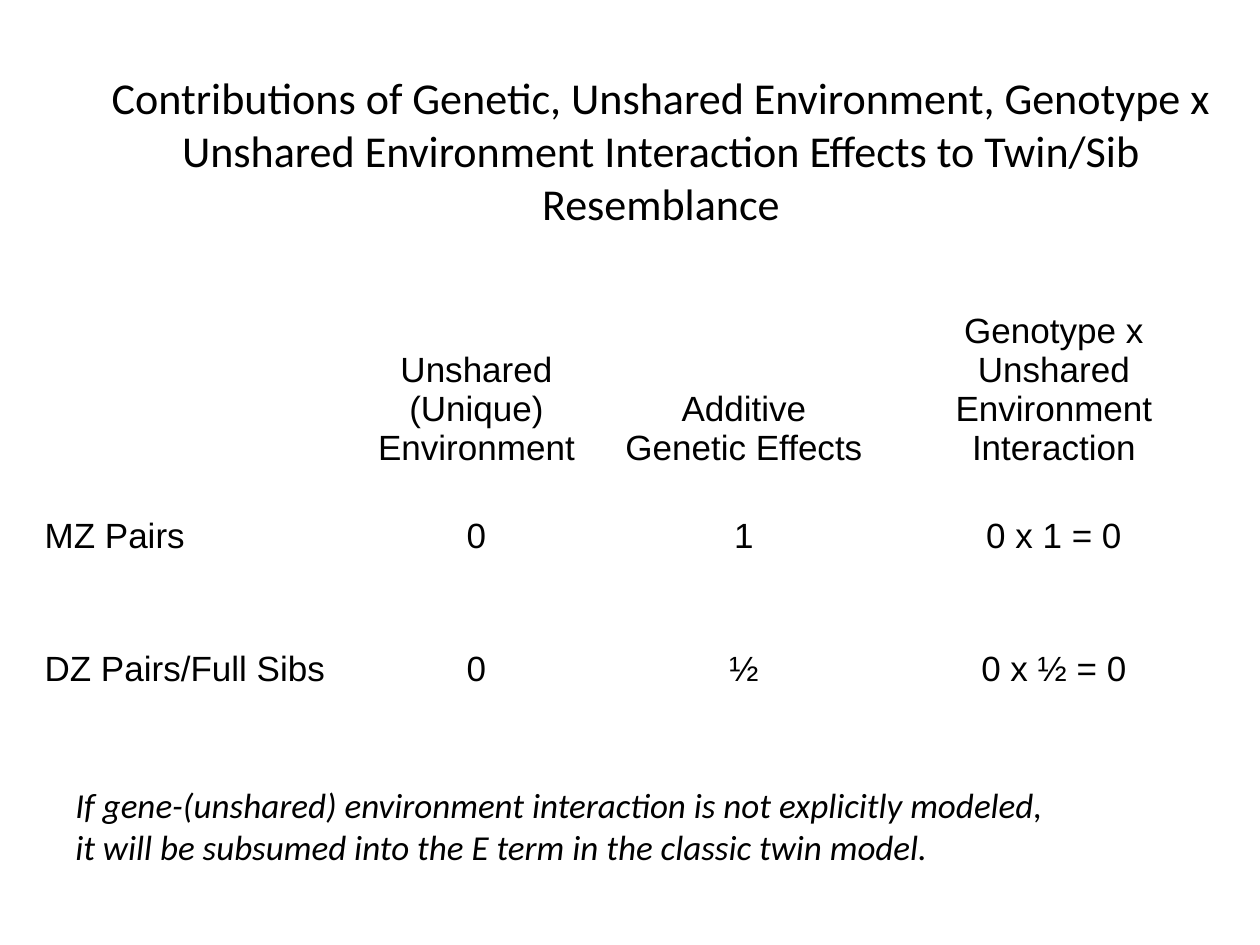
"""Build a slide on gene-environment contributions to twin and sibling resemblance."""
from pptx import Presentation
from pptx.dml.color import RGBColor
from pptx.enum.text import MSO_ANCHOR, MSO_AUTO_SIZE, PP_ALIGN
from pptx.util import Emu, Pt

BLACK = RGBColor(0, 0, 0)
COLUMN_WIDTHS = (312, 265, 270, 350)
ROW_HEIGHTS = (161, 125, 141)
TITLE = (
    "Contributions of Genetic, Unshared Environment, Genotype x "
    "Unshared Environment Interaction Effects to Twin/Sib Resemblance"
)
RESEMBLANCE = (
    ("", "Unshared (Unique) Environment", "Additive Genetic Effects",
     "Genotype x Unshared Environment Interaction"),
    ("MZ Pairs", "0", "1", "0 x 1 = 0"),
    ("DZ Pairs/Full Sibs", "0", "½", "0 x ½ = 0"),
)
NOTE = (
    "If gene-(unshared) environment interaction is not explicitly modeled,\n"
    "it will be subsumed into the E term in the classic twin model."
)


def px(length):
    """Turn pixels into EMU at 126 pixels to the inch."""
    return Emu(round(length * 914400 / 126))


def write(frame, text, font, size, align=PP_ALIGN.LEFT, italic=False, before=0):
    """Fill a text frame and format its paragraphs and runs."""
    frame.text = text
    for para in frame.paragraphs:
        para.alignment = align
        para.space_before = Pt(before)
        for span in para.runs:
            span.font.name = font
            span.font.size = Pt(size)
            span.font.italic = italic
            span.font.color.rgb = BLACK


def add_title(page):
    """Place and format the title placeholder."""
    title = page.shapes.title
    title.left, title.top, title.width, title.height = map(px, (47, 86, 1228, 127))
    frame = title.text_frame
    write(frame, TITLE, "Calibri", 25.2, PP_ALIGN.CENTER)
    frame.word_wrap = True
    frame.auto_size = MSO_AUTO_SIZE.NONE
    frame.vertical_anchor = MSO_ANCHOR.MIDDLE


def add_resemblance_table(page):
    """Add the unfilled table of effects by kind of pair."""
    table = page.shapes.add_table(
        len(ROW_HEIGHTS), len(COLUMN_WIDTHS), px(32), px(305),
        px(sum(COLUMN_WIDTHS)), px(sum(ROW_HEIGHTS)),
    ).table
    table.first_row = False
    table.horz_banding = False
    for column, width in zip(table.columns, COLUMN_WIDTHS):
        column.width = px(width)
    for row_index, (row, height) in enumerate(zip(table.rows, ROW_HEIGHTS)):
        row.height = px(height)
        for column_index, cell in enumerate(row.cells):
            cell.fill.background()
            cell.vertical_anchor = MSO_ANCHOR.MIDDLE if row_index else MSO_ANCHOR.BOTTOM
            align = PP_ALIGN.CENTER if column_index else PP_ALIGN.LEFT
            text = RESEMBLANCE[row_index][column_index]
            write(cell.text_frame, text, "Arial", 20, align, before=4)


def add_note(page):
    """Add the italic remark under the table."""
    box = page.shapes.add_textbox(px(63), px(777), px(1085), px(97))
    box.text_frame.word_wrap = True
    write(box.text_frame, NOTE, "Calibri", 20, italic=True)


def main():
    """Build and save the deck."""
    deck = Presentation()
    deck.slide_width, deck.slide_height = px(1260), px(945)
    page = deck.slides.add_slide(deck.slide_layouts.get_by_name("Title Only"))
    add_title(page)
    add_resemblance_table(page)
    add_note(page)
    deck.save("out.pptx")


if __name__ == "__main__":
    main()
